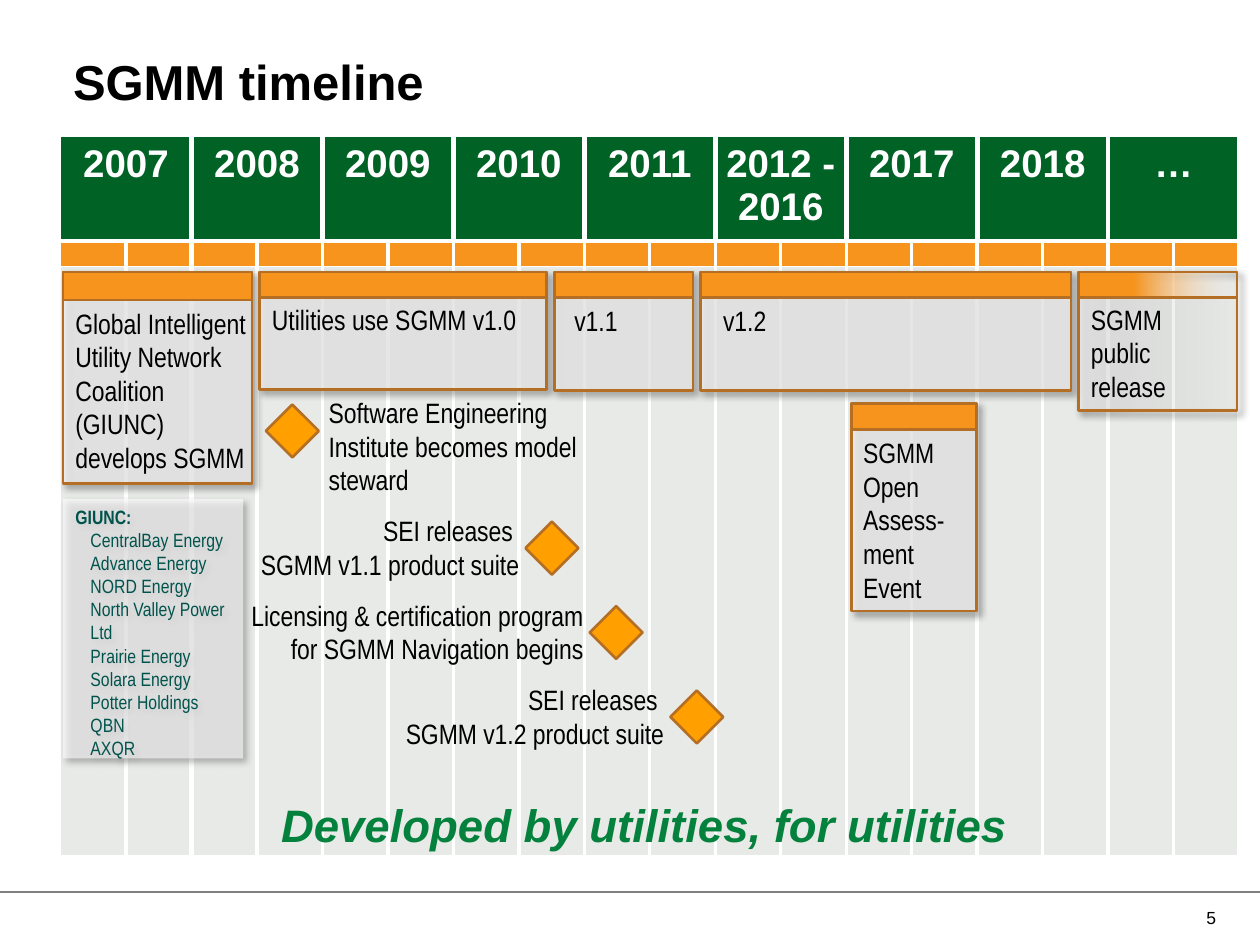
from lxml import etree
from pptx import Presentation
from pptx.dml.color import RGBColor
from pptx.enum import shapes, text
from pptx.oxml import parse_xml
from pptx.oxml.ns import nsdecls, qn
from pptx.util import Inches, Pt

WHITE = RGBColor(0xFF, 0xFF, 0xFF)
BLACK = RGBColor(0, 0, 0)
GREY = RGBColor(0x80, 0x80, 0x80)
PALE = RGBColor(0xE8, 0xEA, 0xE8)
DARK_GREEN = RGBColor(0x00, 0x63, 0x25)
GREEN = RGBColor(0x04, 0x81, 0x3C)
TEAL = RGBColor(0x00, 0x53, 0x4D)
ORANGE = RGBColor(0xF7, 0x94, 0x1E)
AMBER = RGBColor(0xFF, 0xA0, 0x00)
BROWN = RGBColor(0xB4, 0x6F, 0x25)
LEFT, CENTER, RIGHT = text.PP_ALIGN.LEFT, text.PP_ALIGN.CENTER, text.PP_ALIGN.RIGHT
SHAPE = shapes.MSO_SHAPE

prs = Presentation()
prs.slide_width, prs.slide_height = Inches(10), Inches(7.5)
slide = prs.slides.add_slide(prs.slide_layouts[6])


def add_text(place, words, size=16, font="Arial Narrow", color=BLACK, align=LEFT,
             insets=(0.1, 0.05, 0.1, 0.05), bold=False, italic=False):
    frame = slide.shapes.add_textbox(*map(Inches, place)).text_frame
    frame.word_wrap = True
    frame.margin_left, frame.margin_top, frame.margin_right, frame.margin_bottom = map(Inches, insets)
    frame.text = words
    frame.paragraphs[0].alignment = align
    for run in frame.paragraphs[0].runs:
        run.font.size, run.font.name = Pt(size), font
        run.font.bold, run.font.italic = bold, italic
        run.font.color.rgb = color
    return frame


def add_box(kind, place, fill, line=BROWN, opacity=100, shadow=0):
    box = slide.shapes.add_shape(kind, *map(Inches, place))
    box.shadow.inherit = False
    box.fill.solid()
    box.fill.fore_color.rgb = fill
    if opacity < 100:
        tint = box.fill._xPr.find(qn("a:solidFill"))[0]
        etree.SubElement(tint, qn("a:alpha"), val=str(opacity * 1000))
    if line is None:
        box.line.fill.background()
    else:
        box.line.color.rgb = line
        box.line.width = Pt(1.5)
    if shadow:
        box._element.spPr.find(qn("a:effectLst")).append(parse_xml(
            f'<a:outerShdw {nsdecls("a")} blurRad="{Pt(4)}" dist="{Pt(3)}" dir="2700000" '
            f'algn="tl" rotWithShape="0"><a:srgbClr val="000000">'
            f'<a:alpha val="{shadow * 1000}"/></a:srgbClr></a:outerShdw>'))
    return box


footer_rule = slide.shapes.add_connector(
    shapes.MSO_CONNECTOR.STRAIGHT, 0, Inches(7.08), Inches(10), Inches(7.08))
footer_rule.line.color.rgb = GREY
footer_rule.line.width = Pt(1)
etree.SubElement(footer_rule._element.spPr, qn("a:effectLst"))

title = add_text((0.58, 0.46, 8.92, 0.43), "SGMM timeline", 28, "Arial",
                 insets=(0, 0, 0, 0), bold=True)
title.paragraphs[0].line_spacing = 0.9

years = ["2007", "2008", "2009", "2010", "2011", "2012 - 2016", "2017", "2018", "…"]
halves = 2 * len(years)
calendar = slide.shapes.add_table(
    3, halves, Inches(0.48), Inches(1.08), Inches(0.52 * halves), Inches(5.71)).table
for column in calendar.columns:
    column.width = Inches(0.52)
for row, height in zip(calendar.rows, (0.83, 0.2, 4.68)):
    row.height = Inches(height)
for i, year in enumerate(years):
    heading = calendar.cell(0, 2 * i)
    heading.merge(calendar.cell(0, 2 * i + 1))
    heading.text = year
    heading.text_frame.paragraphs[0].alignment = CENTER
    font = heading.text_frame.paragraphs[0].runs[0].font
    font.size, font.name, font.bold = Pt(22), "Arial", True
    font.color.rgb = WHITE
row_fills = (DARK_GREEN, ORANGE, PALE)
rules_above_below = ((1, 2.25), (2.25, 1), (1, 1))
for r in range(3):
    for c in range(halves):
        cell = calendar.cell(r, c)
        cell.margin_left = cell.margin_right = 0
        cell.margin_top = cell.margin_bottom = Inches(0.05 if r == 0 else 0)
        cell.fill.solid()
        cell.fill.fore_color.rgb = row_fills[r]
        if r:
            etree.SubElement(cell.text_frame.paragraphs[0]._p, qn("a:endParaRPr"), sz="800")
        sides = [1 if edge == 0 else 3 if r == 0 or edge == 2 else 2.25 for edge in (c, c + 1)]
        for i, (side, width) in enumerate(zip("LRTB", (*sides, *rules_above_below[r]))):
            cell._tc.get_or_add_tcPr().insert(i, parse_xml(
                f'<a:ln{side} {nsdecls("a")} w="{Pt(width)}"><a:solidFill>'
                f'<a:srgbClr val="{WHITE}"/></a:solidFill></a:ln{side}>'))

coalition = add_box(SHAPE.ROUNDED_RECTANGLE, (0.5, 3.96, 1.43, 2.06), WHITE, None, 60, 43)
coalition.adjustments[0] = 0
members = coalition.text_frame
members.word_wrap = True
members.vertical_anchor = text.MSO_ANCHOR.TOP
members.text = "\n".join([
    "GIUNC:", "CentralBay Energy", "Advance Energy", "NORD Energy", "North Valley Power Ltd",
    "Prairie Energy", "Solara Energy", "Potter Holdings", "QBN", "AXQR"])
for i, member in enumerate(members.paragraphs):
    member.alignment = LEFT
    properties = member._p.get_or_add_pPr()
    properties.set("marL", str(Inches(0.12)))
    properties.set("indent", str(0 if i else Inches(-0.12)))
    font = member.runs[0].font
    font.size, font.name, font.bold = Pt(11), "Arial Narrow", i == 0
    font.color.rgb = TEAL

NARROW_RIGHT = (0.1, 0.05, 0, 0.05)
STANDARD = (0.1, 0.05, 0.1, 0.05)
phases = [
    ((0.5, 2.16, 1.5, 1.68), 0.22, (0.5, 2.38, 1.5, 1.45), NARROW_RIGHT,
     "Global Intelligent Utility Network Coalition (GIUNC) develops SGMM"),
    ((2.06, 2.16, 2.28, 0.93), 0.2, (2.06, 2.35, 2.25, 0.37), STANDARD, "Utilities use SGMM v1.0"),
    ((4.4, 2.16, 1.1, 0.94), 0.2, (4.46, 2.36, 0.95, 0.43), STANDARD, "v1.1"),
    ((5.56, 2.16, 2.94, 0.94), 0.2, (5.64, 2.36, 2.76, 0.43), STANDARD, "v1.2"),
    ((6.76, 3.2, 0.99, 1.65), 0.21, (6.8, 3.41, 0.92, 1.72), (0.05, 0.05, 0, 0.05),
     "SGMM Open Assess-ment \vEvent"),
    ((8.56, 2.16, 1.26, 1.1), 0.2, (8.56, 2.35, 1.26, 0.91), STANDARD, "SGMM \vpublic release"),
]
for place, band_height, words_place, insets, words in phases:
    card = add_box(SHAPE.RECTANGLE, place, WHITE, opacity=61, shadow=40)
    band = add_box(SHAPE.RECTANGLE, (*place[:3], band_height), ORANGE)
    add_text(words_place, words, insets=insets)

fades = [
    (card, [(0, WHITE, 61), (35, WHITE, 25), (100, WHITE, 0)]),
    (band, [(35, ORANGE, 100), (100, WHITE, 0)]),
]
for faded, stops in fades:
    faded.fill.gradient()
    faded.fill.gradient_angle = 0
    stop_list = faded._element.spPr.find(qn("a:gradFill")).find(qn("a:gsLst"))
    for stop in list(stop_list):
        stop_list.remove(stop)
    for position, color, opacity in stops:
        stop_list.append(parse_xml(
            f'<a:gs {nsdecls("a")} pos="{position * 1000}"><a:srgbClr val="{color}">'
            f'<a:alpha val="{opacity * 1000}"/></a:srgbClr></a:gs>'))

milestones = [
    ((2.11, 3.21), (2.51, 3.09, 2.29, 0.91), LEFT,
     "Software Engineering Institute becomes model steward"),
    ((4.17, 4.14), (1.93, 4.03, 2.29, 0.64), RIGHT, "SEI releases \vSGMM v1.1 product suite"),
    ((4.68, 4.81), (1.79, 4.7, 2.94, 0.64), RIGHT,
     "Licensing & certification program for SGMM Navigation begins"),
    ((5.32, 5.48), (2.7, 5.37, 2.67, 0.64), RIGHT, "SEI releases \vSGMM v1.2 product suite"),
]
for corner, words_place, align, words in milestones:
    add_text(words_place, words, align=align)
    add_box(SHAPE.DIAMOND, (*corner, 0.42, 0.42), AMBER)

add_text((1.88, 6.28, 6.47, 0.54), "Developed by utilities, for utilities", 26, "Arial",
         GREEN, CENTER, bold=True, italic=True)
page_number = add_text((8.58, 7.13, 1.17, 0.3), "5", 10, "Arial", align=RIGHT)
page_number.vertical_anchor = text.MSO_ANCHOR.MIDDLE

prs.save("out.pptx")
